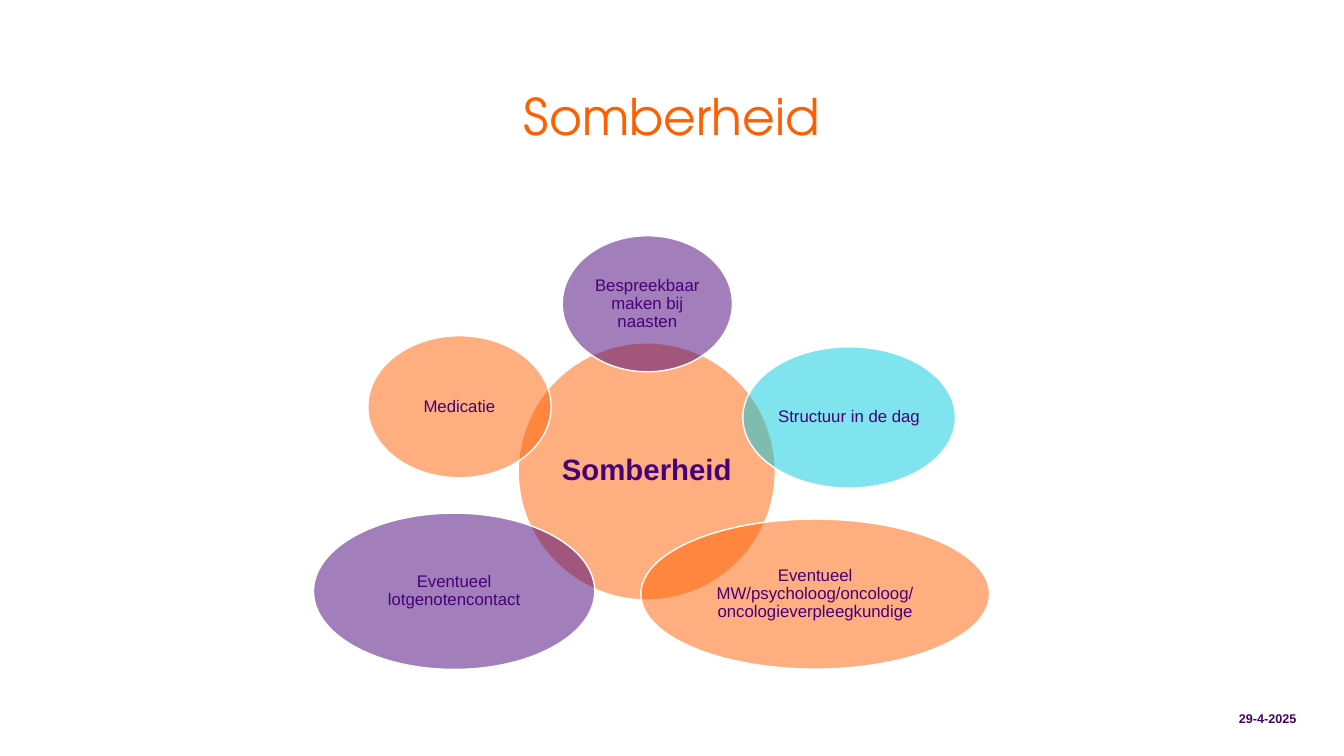
"""Build the Somberheid slide: a central theme circled by five approaches."""
import pptx
import pptx.dml.color
import pptx.enum.shapes
import pptx.enum.text
import pptx.oxml.ns
import pptx.util
from lxml import etree

Cm = pptx.util.Cm
Pt = pptx.util.Pt
RGBColor = pptx.dml.color.RGBColor
PP_ALIGN = pptx.enum.text.PP_ALIGN
MSO_ANCHOR = pptx.enum.text.MSO_ANCHOR

ORANGE = RGBColor(0xFF, 0x5F, 0x00)
PURPLE = RGBColor(0x46, 0x00, 0x78)
CYAN = RGBColor(0x00, 0xCB, 0xDE)
DATE_PURPLE = RGBColor(0x46, 0x00, 0x64)
WHITE = RGBColor(0xFF, 0xFF, 0xFF)

THEME = ("Somberheid", ORANGE, 13.06, 8.64, 6.48, 6.48)
APPROACHES = [
    ("Bespreekbaar maken bij naasten", PURPLE, 14.17, 5.94, 4.29, 3.43),
    ("Structuur in de dag", CYAN, 18.72, 8.74, 5.36, 3.56),
    ("Eventueel MW/psycholoog/oncoloog/ oncologieverpleegkundige",
     ORANGE, 16.15, 13.08, 8.79, 3.78),
    ("Eventueel lotgenotencontact", PURPLE, 7.9, 12.93, 7.09, 3.94),
    ("Medicatie", ORANGE, 9.27, 8.46, 4.62, 3.58),
]


def set_text(sp, text, size, color, font="Arial", bold=False,
             align=PP_ALIGN.CENTER, anchor=MSO_ANCHOR.MIDDLE):
    """Write one formatted paragraph into a shape."""
    tf = sp.text_frame
    tf.text = text
    tf.word_wrap = True
    tf.auto_size = pptx.enum.text.MSO_AUTO_SIZE.NONE
    tf.vertical_anchor = anchor
    p = tf.paragraphs[0]
    p.alignment = align
    p.line_spacing = 0.9
    p.space_before = Pt(0)
    r = p.runs[0]
    r.font.name = font
    r.font.size = Pt(size)
    r.font.bold = bold
    r.font.color.rgb = color


def add_title(slide, text):
    """Place and format the title placeholder."""
    sp = slide.shapes.title
    sp.left, sp.top, sp.width, sp.height = Cm(3.48), Cm(2.18), Cm(26.9), Cm(1.24)
    set_text(sp, text, 36, ORANGE, font="TeX Gyre Adventor",
             anchor=MSO_ANCHOR.TOP)


def add_date(slide, text):
    """Add the date in the bottom right corner."""
    sp = slide.shapes.add_textbox(Cm(29.69), Cm(17.63), Cm(3.23), Cm(1.02))
    set_text(sp, text, 9, DATE_PURPLE, bold=True, align=PP_ALIGN.RIGHT)


def add_bubble(slide, bubble, size=12, bold=False, inset=0.05):
    """Add a half-transparent ellipse with its text."""
    text, color, *box = bubble
    sp = slide.shapes.add_shape(pptx.enum.shapes.MSO_SHAPE.OVAL, *map(Cm, box))
    sp.shadow.inherit = False
    sp.fill.solid()
    sp.fill.fore_color.rgb = color
    srgb = sp.fill._xPr.find(".//" + pptx.oxml.ns.qn("a:srgbClr"))
    etree.SubElement(srgb, pptx.oxml.ns.qn("a:alpha"), val="50000")
    sp.line.color.rgb = WHITE
    sp.line.width = Pt(1)
    set_text(sp, text, size, PURPLE, bold=bold)
    tf = sp.text_frame
    tf.margin_left = tf.margin_right = Cm(inset)
    tf.margin_top = tf.margin_bottom = Cm(inset)


def main():
    """Create the slide and save it."""
    prs = pptx.Presentation()
    prs.slide_width, prs.slide_height = Cm(33.87), Cm(19.05)
    slide = prs.slides.add_slide(prs.slide_layouts.get_by_name("Title Only"))
    add_title(slide, "Somberheid")
    add_date(slide, "29-4-2025")
    add_bubble(slide, THEME, size=21, bold=True, inset=0.08)
    for approach in APPROACHES:
        add_bubble(slide, approach)
    prs.save("out.pptx")


if __name__ == "__main__":
    main()
